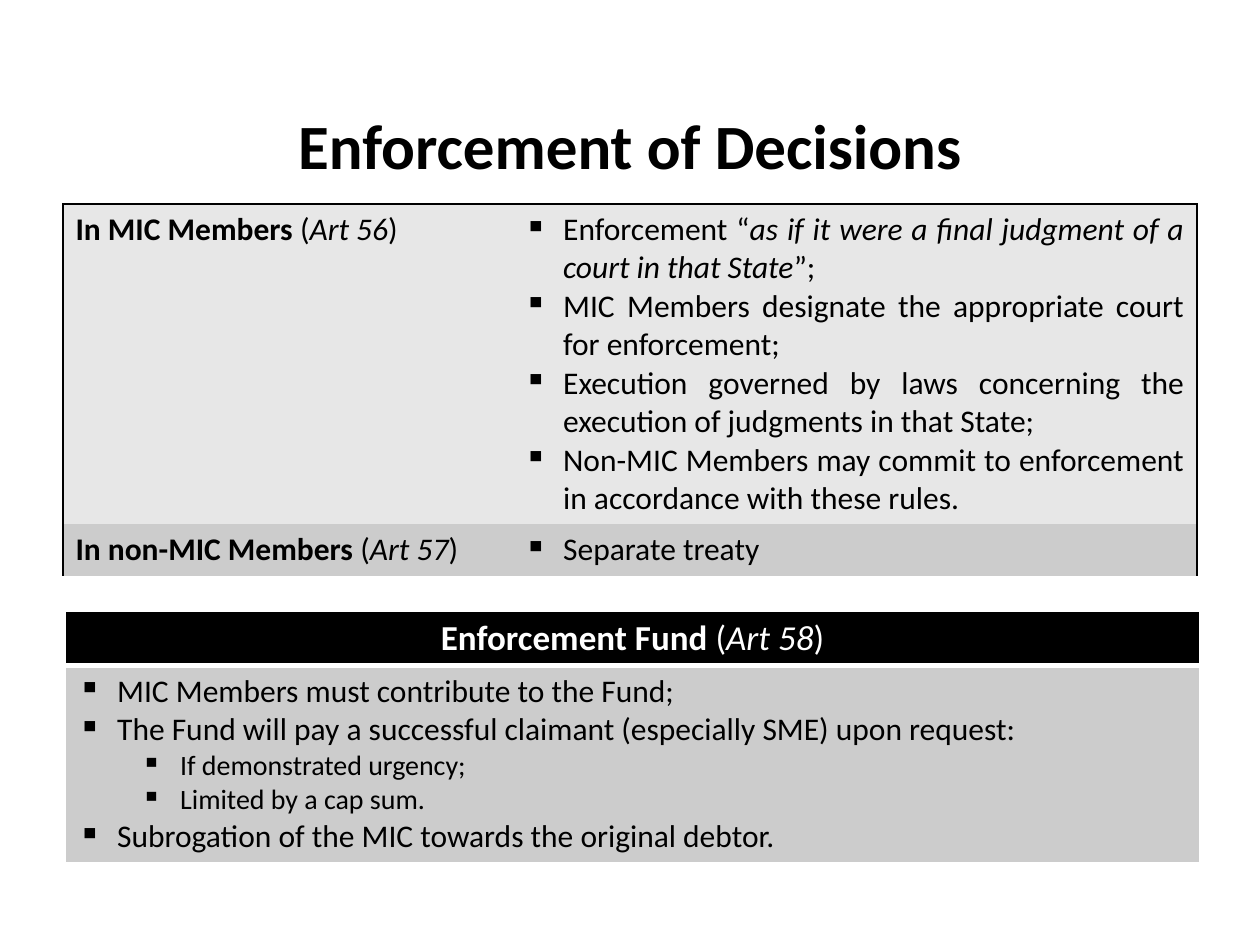
from dataclasses import dataclass

from lxml import etree
from pptx import Presentation
from pptx import util as u
from pptx.dml.color import RGBColor
from pptx.enum import text
from pptx.oxml.ns import qn

ALIGN = text.PP_ALIGN


@dataclass(frozen=True)
class Theme:
    font: str = "Calibri"
    black: str = "000000"
    white: str = "FFFFFF"
    light: str = "E7E7E7"
    grey: str = "CCCCCC"
    title: int = 36
    heading: int = 20
    body: int = 18
    sub: int = 16
    indent: float = 0.31
    level_step: float = 0.5


class Deck:
    def __init__(self, prs, theme):
        self.theme = theme
        self.s = prs.slides.add_slide(prs.slide_layouts[6])

    def runs(self, p, parts, size, color):
        """Fill a paragraph from (text, style) pairs; style holds b and/or i."""
        for words, style in parts:
            r = p.add_run()
            r.text = words
            fmt = {"name": self.theme.font, "size": u.Pt(size),
                   "bold": "b" in style, "italic": "i" in style}
            for key, value in fmt.items():
                setattr(r.font, key, value)
            r.font.color.rgb = RGBColor.from_string(color)

    def bullet(self, p, level):
        t = self.theme
        p.level = level
        pPr = p._p.get_or_add_pPr()
        pPr.set("marL", str(u.Inches(t.indent + level * t.level_step)))
        pPr.set("indent", str(u.Inches(-t.indent)))
        etree.SubElement(pPr, qn("a:buChar"), char="▪")

    def title(self, words, x, y, w, h):
        tf = self.s.shapes.add_textbox(*map(u.Inches, (x, y, w, h))).text_frame
        tf.word_wrap = True
        tf.vertical_anchor = text.MSO_ANCHOR.MIDDLE
        p = tf.paragraphs[0]
        p.alignment = ALIGN.CENTER
        self.runs(p, [(words, "b")], self.theme.title, self.theme.black)

    def table(self, x, y, cols, rows):
        frame = self.s.shapes.add_table(
            len(rows), len(cols), *map(u.Inches, (x, y, sum(cols), sum(rows))))
        tbl = frame.table
        tbl.first_row = tbl.horz_banding = False
        for col, width in zip(tbl.columns, cols):
            col.width = u.Inches(width)
        for row, height in zip(tbl.rows, rows):
            row.height = u.Inches(height)
        return tbl

    def fill_cell(self, cell, fill, borders):
        """Borders map an edge (L, R, T, B) to (colour, points); others are off."""
        cell.fill.solid()
        cell.fill.fore_color.rgb = RGBColor.from_string(fill)
        tcPr = cell._tc.get_or_add_tcPr()
        for place, edge in enumerate("LRTB"):
            ln = etree.Element(qn(f"a:ln{edge}"))
            tcPr.insert(place, ln)
            if edge in borders:
                color, width = borders[edge]
                ln.set("w", str(u.Pt(width)))
                solid = etree.SubElement(ln, qn("a:solidFill"))
                etree.SubElement(solid, qn("a:srgbClr"), val=color)
            else:
                etree.SubElement(ln, qn("a:noFill"))

    def heading(self, cell, parts, size, color, align=ALIGN.LEFT):
        p = cell.text_frame.paragraphs[0]
        p.alignment = align
        self.runs(p, parts, size, color)

    def bullets(self, cell, items, align=ALIGN.JUSTIFY):
        """Write one bullet for each (level, parts) item."""
        t, tf = self.theme, cell.text_frame
        for n, (level, parts) in enumerate(items):
            p = tf.add_paragraph() if n else tf.paragraphs[0]
            self.bullet(p, level)
            p.alignment = align
            self.runs(p, parts, t.sub if level else t.body, t.black)


def label(name, article):
    return [(name + " ", "b"), ("(", ""), (article, "i"), (")", "")]


def plain(words, level=0):
    return level, [(words, "")]


def main():
    prs = Presentation()
    prs.slide_width, prs.slide_height = u.Inches(10), u.Inches(7.5)
    t = Theme()
    deck = Deck(prs, t)
    deck.title("Enforcement of Decisions", 0.5, 0.52, 9, 1.25)

    member_rules = [
        (0, [("Enforcement “", ""),
             ("as if it were a final judgment of a court in that State", "i"),
             ("”;", "")]),
        plain("MIC Members designate the appropriate court for enforcement;"),
        plain("Execution governed by laws concerning the execution of "
              "judgments in that State;"),
        plain("Non-MIC Members may commit to enforcement in accordance with "
              "these rules."),
    ]
    decisions = [
        (label("In MIC Members", "Art 56"), member_rules, t.light, "T", ALIGN.JUSTIFY),
        (label("In non-MIC Members", "Art 57"), [plain("Separate treaty")],
         t.grey, "", ALIGN.LEFT),
    ]
    tbl = deck.table(0.5, 1.62, [3.56, 5.44], [2.54, 0.41])
    for row, (name, rules, fill, top, align) in enumerate(decisions):
        left, right = tbl.cell(row, 0), tbl.cell(row, 1)
        for cell, side in ((left, "L"), (right, "R")):
            deck.fill_cell(cell, fill, {e: (t.black, 1) for e in side + top})
        deck.heading(left, name, t.body, t.black)
        deck.bullets(right, rules, align)

    fund = deck.table(0.52, 4.85, [9], [0.43, 1.56])
    head, body = fund.cell(0, 0), fund.cell(1, 0)
    frame = {edge: (t.white, 1) for edge in "LRTB"}
    divider = (t.white, 3)
    deck.fill_cell(head, t.black, {**frame, "B": divider})
    deck.fill_cell(body, t.grey, {**frame, "T": divider})
    deck.heading(head, label("Enforcement Fund", "Art 58"), t.heading, t.white,
                 ALIGN.CENTER)
    deck.bullets(body, [
        plain("MIC Members must contribute to the Fund;"),
        plain("The Fund will pay a successful claimant (especially SME) upon request:"),
        plain("If demonstrated urgency;", 1),
        plain("Limited by a cap sum.", 1),
        plain("Subrogation of the MIC towards the original debtor."),
    ])
    prs.save("out.pptx")


if __name__ == "__main__":
    main()
